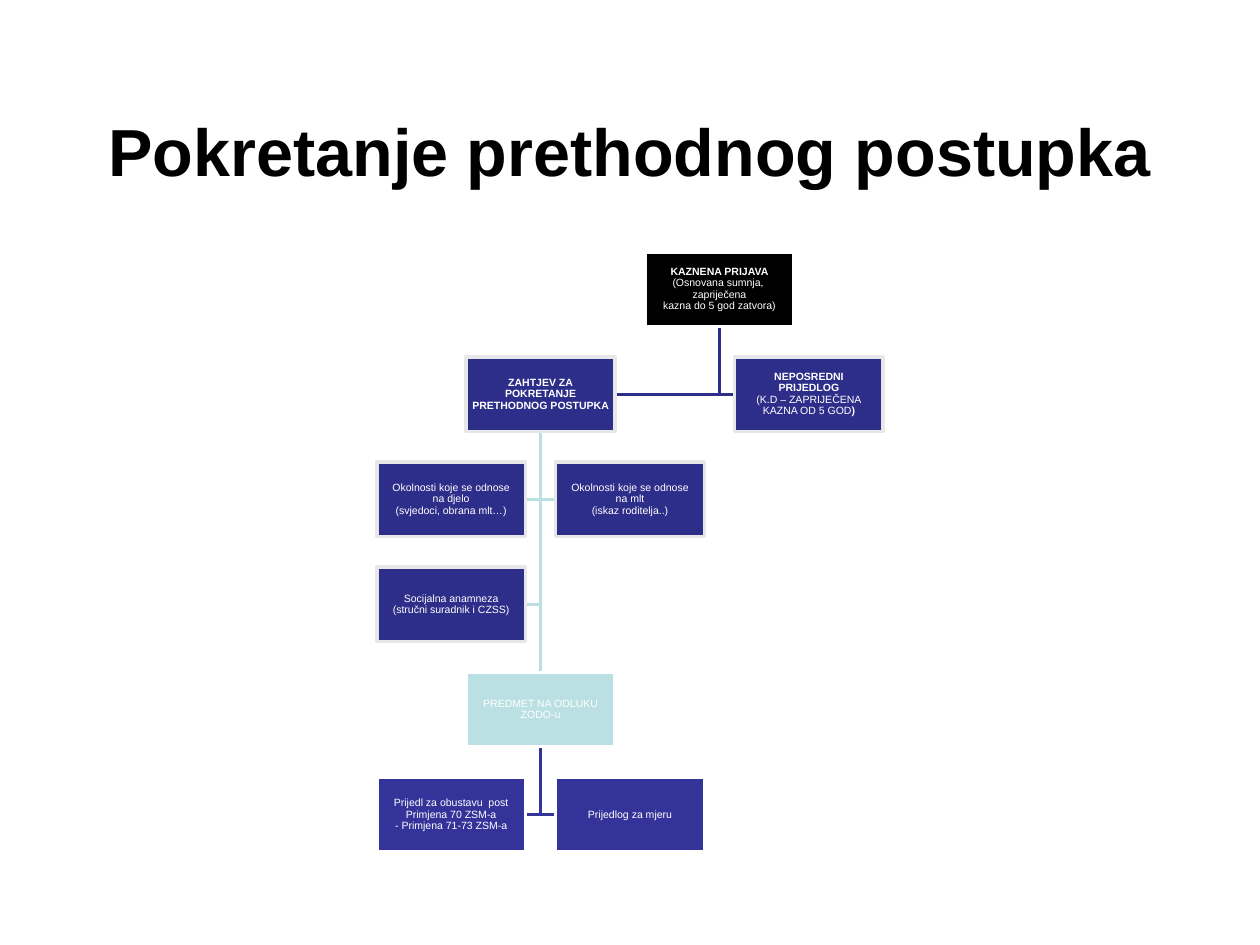
from lxml import etree
from pptx import Presentation
from pptx.dml.color import RGBColor
from pptx.enum import shapes, text
from pptx.oxml.ns import qn
from pptx.util import Inches, Pt

NAVY, INDIGO, PALE = "2D2D8A", "333399", "BBE0E3"
BLACK, WHITE, GREY = "000000", "FFFFFF", "E7E7E7"
BOX_W, BOX_H = 1.18, 0.59
LEFT, TOP = 2.99, 2.0
COL, ROW = 0.71, 0.834


def color(code):
    return RGBColor.from_string(code)


class Chart:
    """Style and current slide of an organisation chart."""
    font = "Arial"
    line = Pt(2)

    def __init__(self, slide):
        self.slide = slide

    def style(self, para, size, ink, bold):
        para.alignment = text.PP_ALIGN.CENTER
        para.line_spacing = 0.9
        para.font.name = self.font
        para.font.size = Pt(size)
        para.font.bold = bold
        para.font.color.rgb = color(ink)

    def title(self, words):
        title = self.slide.shapes.title
        title.left, title.top = Inches(0.69), Inches(0.61)
        title.width, title.height = Inches(8.62), Inches(1.24)
        frame = title.text_frame
        frame.text = words
        frame.auto_size = text.MSO_AUTO_SIZE.NONE
        frame.vertical_anchor = text.MSO_ANCHOR.MIDDLE
        self.style(frame.paragraphs[0], 38, BLACK, True)

    def box(self, col, row, lines, fill, edge, bold=0):
        """Add a box on the grid; its first `bold` lines are bold."""
        box = self.slide.shapes.add_shape(
            shapes.MSO_SHAPE.RECTANGLE, Inches(LEFT + col * COL),
            Inches(TOP + row * ROW), Inches(BOX_W), Inches(BOX_H))
        box.shadow.inherit = False
        box.fill.solid()
        box.fill.fore_color.rgb = color(fill)
        box.line.color.rgb = color(edge)
        box.line.width = self.line
        frame = box.text_frame
        frame.word_wrap = True
        frame.vertical_anchor = text.MSO_ANCHOR.MIDDLE
        frame.margin_left = frame.margin_right = 0
        frame.margin_top = frame.margin_bottom = 0
        frame.text = "\n".join(lines)
        for i, para in enumerate(frame.paragraphs):
            self.style(para, 6, WHITE, i < bold)
        return box

    def finish(self, link, ink):
        """Colour a link and put it behind the boxes."""
        link.line.color.rgb = color(ink)
        link.line.width = self.line
        link.element.getparent().insert(2, link.element)

    def elbow(self, parent, child, ink):
        """Go down from the parent, then sideways to the child's near side."""
        x = parent.left + parent.width // 2
        y = child.top + child.height // 2
        side = child.left if child.left > x else child.left + child.width
        path = self.slide.shapes.build_freeform(x, parent.top + parent.height)
        path.add_line_segments([(x, y), (side, y)], close=False)
        link = path.convert_to_shape()
        link.fill.background()
        link.shadow.inherit = False
        self.finish(link, ink)

    def drop(self, parent, child, ink):
        link = self.slide.shapes.add_connector(
            shapes.MSO_CONNECTOR.STRAIGHT, 0, 0, 0, 0)
        link.begin_connect(parent, 2)
        link.end_connect(child, 0)
        etree.SubElement(link.element.spPr, qn("a:effectLst"))
        self.finish(link, ink)


def main():
    deck = Presentation()
    deck.slide_width, deck.slide_height = Inches(10), Inches(7.5)
    chart = Chart(deck.slides.add_slide(deck.slide_layouts[5]))
    chart.title("Pokretanje prethodnog postupka")

    report = chart.box(3, 0, [
        "KAZNENA PRIJAVA", "(Osnovana sumnja,  zapriječena",
        "kazna do 5 god zatvora)"], BLACK, WHITE, bold=1)
    request = chart.box(1, 1, [
        "ZAHTJEV ZA", "POKRETANJE", "PRETHODNOG POSTUPKA"],
        NAVY, GREY, bold=3)
    direct = chart.box(4, 1, [
        "NEPOSREDNI", "PRIJEDLOG", "(K.D – ZAPRIJEČENA",
        "KAZNA OD 5 GOD"], NAVY, GREY, bold=2)
    end = direct.text_frame.paragraphs[-1].add_run()
    end.text, end.font.bold = ")", True

    facts = [
        chart.box(0, 2, ["Okolnosti koje se odnose", "na djelo",
                         "(svjedoci, obrana mlt…)"], NAVY, GREY),
        chart.box(2, 2, ["Okolnosti koje se odnose", "na mlt",
                         "(iskaz roditelja..)"], NAVY, GREY),
        chart.box(0, 3, ["Socijalna anamneza",
                         "(stručni suradnik i CZSS)"], NAVY, GREY)]
    ruling = chart.box(1, 4, ["PREDMET NA ODLUKU", "ZODO-u"], PALE, WHITE)
    motions = [
        chart.box(0, 5, ["Prijedl za obustavu  post", "Primjena 70 ZSM-a",
                         "- Primjena 71-73 ZSM-a"], INDIGO, WHITE),
        chart.box(2, 5, ["Prijedlog za mjeru"], INDIGO, WHITE)]

    for parent, children, ink in [(report, [request, direct], NAVY),
                                  (request, facts, PALE),
                                  (ruling, motions, INDIGO)]:
        for child in children:
            chart.elbow(parent, child, ink)
    chart.drop(request, ruling, PALE)
    deck.save("out.pptx")


if __name__ == "__main__":
    main()
